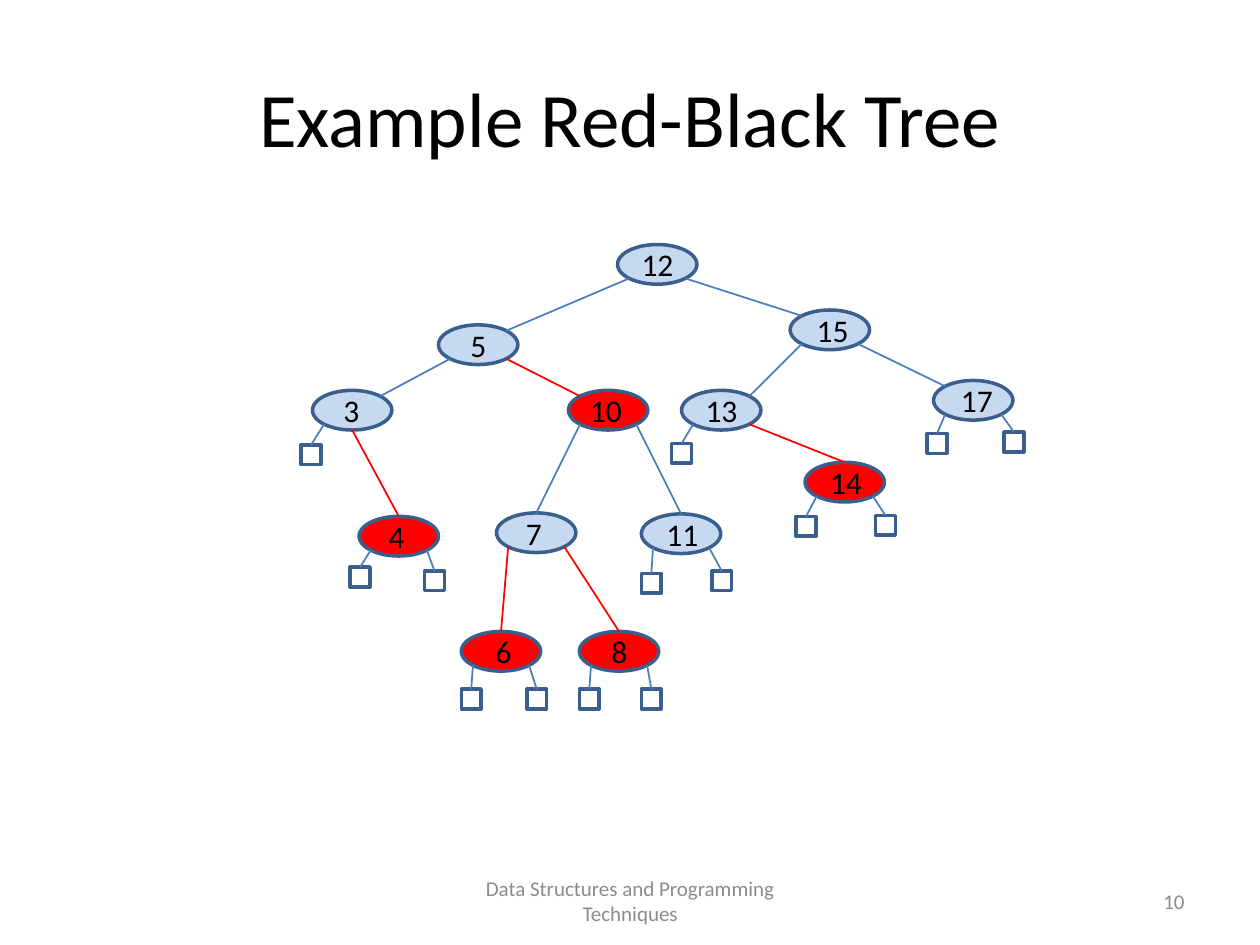
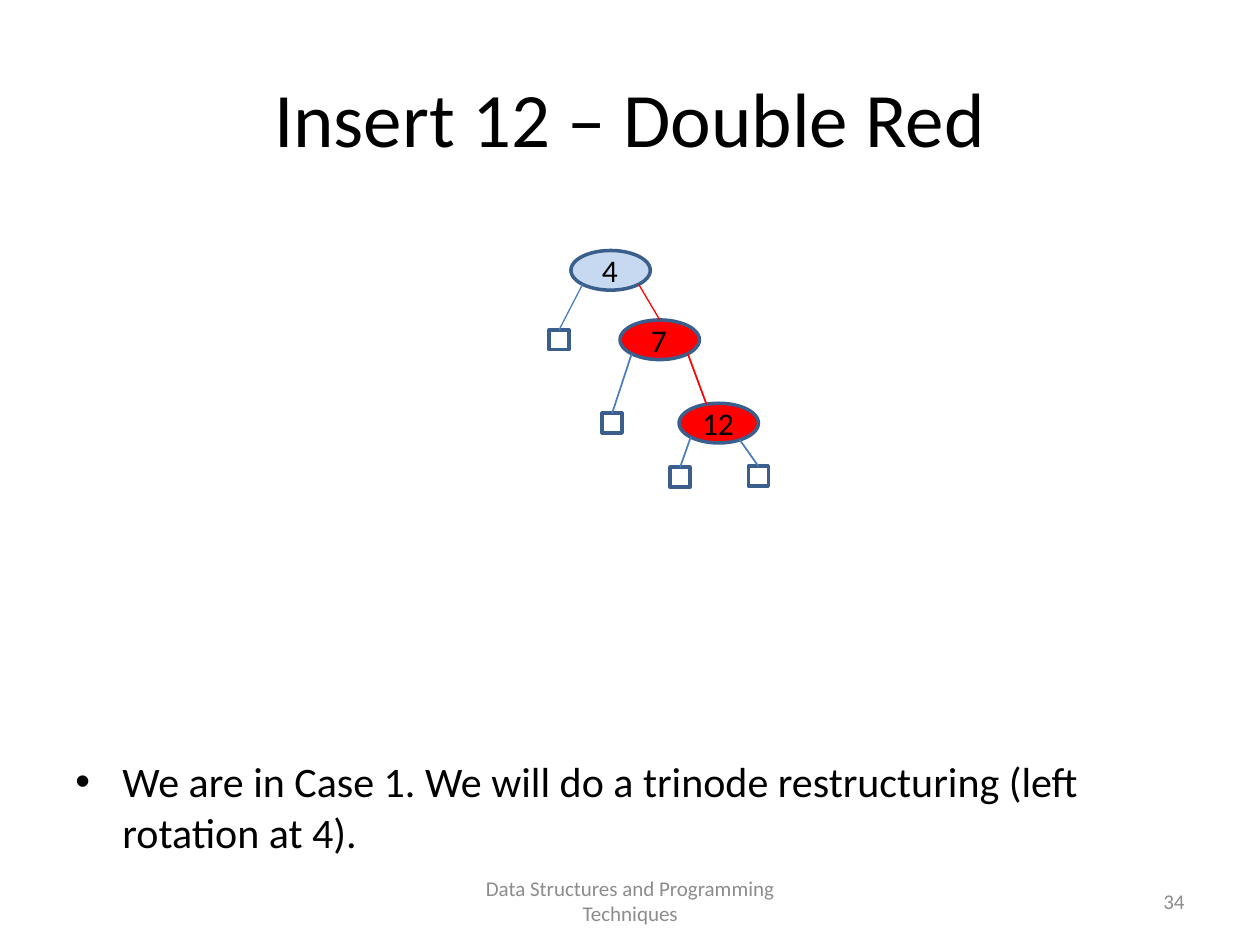
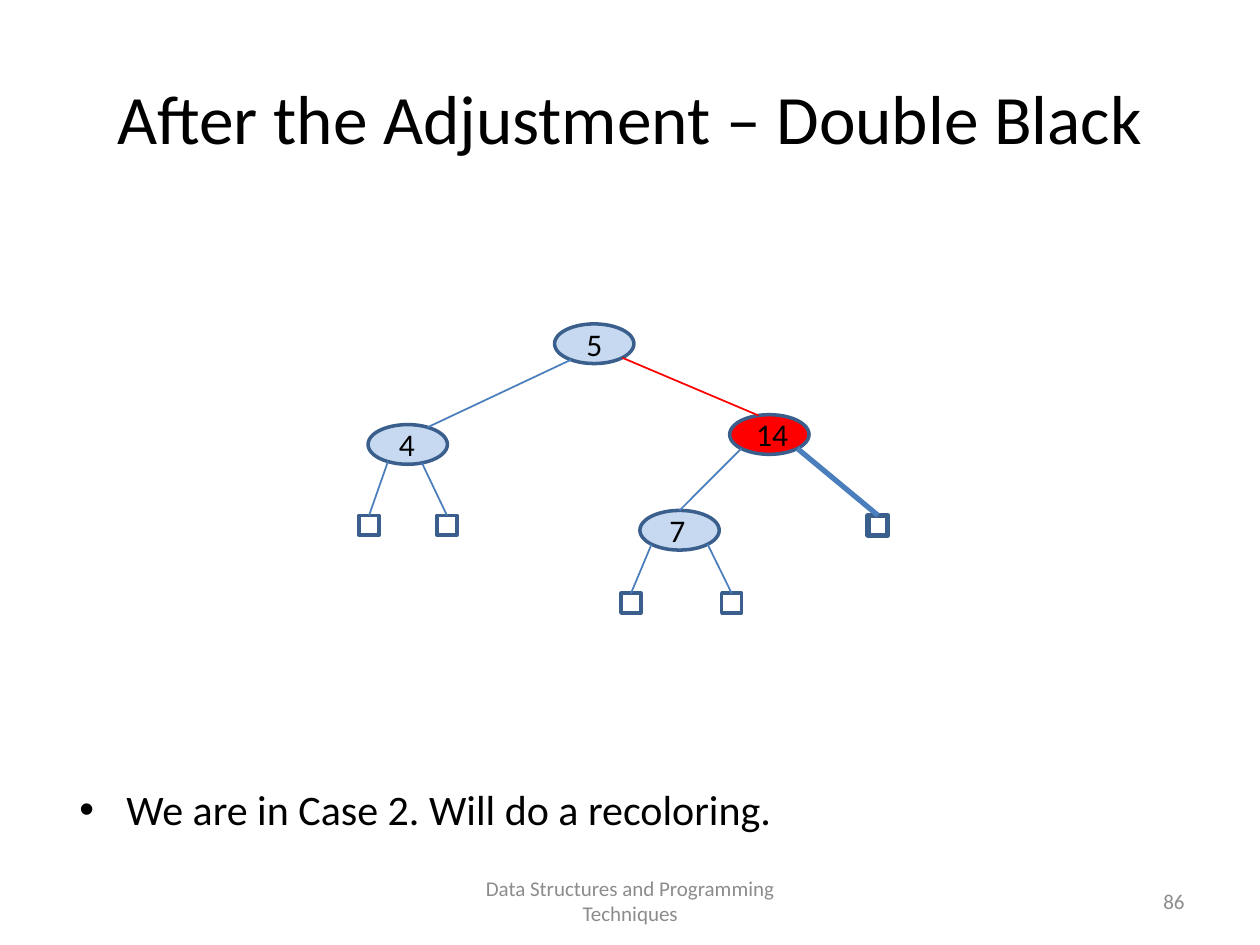
import dataclasses
import math

import lxml.etree
import pptx
import pptx.dml.color
import pptx.enum.shapes
import pptx.enum.text
import pptx.oxml.ns
import pptx.util

Cm = pptx.util.Cm
Pt = pptx.util.Pt
RGBColor = pptx.dml.color.RGBColor
Shape = pptx.enum.shapes.MSO_SHAPE
Align = pptx.enum.text.PP_ALIGN
Anchor = pptx.enum.text.MSO_ANCHOR
qn = pptx.oxml.ns.qn

BLACK = RGBColor(0x00, 0x00, 0x00)
GREY = RGBColor(0x8C, 0x8C, 0x8C)
RED = RGBColor(0xFF, 0x00, 0x00)
PALE_BLUE = RGBColor(0xC6, 0xD9, 0xF1)
OUTLINE_BLUE = RGBColor(0x3A, 0x5F, 0x8C)
EDGE_BLUE = RGBColor(0x4B, 0x7E, 0xBC)

FONT = "Calibri"
FOOTER = "Data Structures and Programming Techniques"
NODE_WIDTH, NODE_HEIGHT = 1.6, 0.8
LEAF_SIZE = 0.4

# Places on a node's rim, in degrees counter-clockwise from its right end
UPPER_RIGHT, TOP, UPPER_LEFT = 45, 90, 135
LOWER_LEFT, BOTTOM, LOWER_RIGHT = 225, 270, 315


@dataclasses.dataclass
class Node:
    """A tree node in cm; label_shift is the label box's offset from its left."""
    left: float
    top: float
    colour: RGBColor = PALE_BLUE
    label_shift: float = 0.16

    def rim(self, angle):
        turn = math.radians(angle)
        return (self.left + NODE_WIDTH / 2 * (1 + math.cos(turn)),
                self.top + NODE_HEIGHT / 2 * (1 - math.sin(turn)))


def write(frame, text, size=18, colour=BLACK, align=Align.CENTER,
          anchor=Anchor.TOP, bullet=False):
    frame.word_wrap = True
    frame.auto_size = pptx.enum.text.MSO_AUTO_SIZE.NONE
    frame.vertical_anchor = anchor
    para = frame.paragraphs[0]
    para.alignment = align
    span = para.add_run()
    span.text = text
    span.font.name = FONT
    span.font.size = Pt(size)
    span.font.color.rgb = colour
    if bullet:
        properties = para._p.get_or_add_pPr()
        properties.set("marL", str(Cm(0.95)))
        properties.set("indent", str(-Cm(0.95)))
        lxml.etree.SubElement(properties, qn("a:buFont"), typeface="Arial")
        lxml.etree.SubElement(properties, qn("a:buChar"), char="•")


class TreeDeck:
    def __init__(self):
        self.deck = pptx.Presentation()
        self.deck.slide_width = Cm(25.4)
        self.deck.slide_height = Cm(19.05)
        self.page = None

    def start_page(self, title, number, title_size=44):
        self.page = self.deck.slides.add_slide(self.deck.slide_layouts[5])
        heading = self.page.shapes.title
        heading.left, heading.top = Cm(1.27), Cm(0.76)
        heading.width, heading.height = Cm(22.86), Cm(3.18)
        write(heading.text_frame, title, size=title_size, anchor=Anchor.MIDDLE)
        small = dict(size=12, colour=GREY, anchor=Anchor.MIDDLE)
        self.text(FOOTER, 8.68, 17.65, 8.05, 1.02, **small)
        self.text(str(number), 18.2, 17.65, 5.93, 1.02, align=Align.RIGHT, **small)

    def text(self, text, left, top, width, height, **style):
        box = self.page.shapes.add_textbox(Cm(left), Cm(top), Cm(width), Cm(height))
        write(box.text_frame, text, **style)

    def bullet(self, text, left, top):
        self.text(text, left, top, 22.86, 2.2, size=24, align=Align.LEFT, bullet=True)

    def shape(self, kind, left, top, width, height, fill=None, weight=2):
        shape = self.page.shapes.add_shape(
            kind, Cm(left), Cm(top), Cm(width), Cm(height))
        shape.shadow.inherit = False
        shape.line.color.rgb = OUTLINE_BLUE
        shape.line.width = Pt(weight)
        if fill is None:
            shape.fill.background()
        else:
            shape.fill.solid()
            shape.fill.fore_color.rgb = fill
        return shape

    def edge(self, start, end, colour=EDGE_BLUE, weight=1, joined=None):
        """Draw a line; joined is a shape whose top middle it ends at."""
        line = self.page.shapes.add_connector(
            pptx.enum.shapes.MSO_CONNECTOR.STRAIGHT,
            Cm(start[0]), Cm(start[1]), Cm(end[0]), Cm(end[1]))
        line.line.color.rgb = colour
        line.line.width = Pt(weight)
        lxml.etree.SubElement(line._element.spPr, qn("a:effectLst"))
        if joined is not None:
            line.end_connect(joined, 0)

    def leaf(self, parent, angle, left, top, edge_weight=1, outline=2):
        box = self.shape(Shape.RECTANGLE, left, top, LEAF_SIZE, LEAF_SIZE,
                         weight=outline)
        self.edge(parent.rim(angle), (left + LEAF_SIZE / 2, top),
                  weight=edge_weight, joined=box)

    def tree(self, nodes, branches, leaves):
        """Draw nodes by value, (parent, angle, child, angle) branches and leaves."""
        ovals = {value: self.shape(Shape.OVAL, node.left, node.top,
                                   NODE_WIDTH, NODE_HEIGHT, fill=node.colour)
                 for value, node in nodes.items()}
        for parent, start, child, end, *weight in branches:
            target = nodes[child]
            self.edge(nodes[parent].rim(start), target.rim(end),
                      RED if target.colour == RED else EDGE_BLUE, *weight,
                      joined=ovals[child] if end == TOP else None)
        for parent, *place in leaves:
            self.leaf(nodes[parent], *place)
        for value, node in nodes.items():
            self.text(str(value), node.left + node.label_shift, node.top - 0.11,
                      1.25, 1.02)


def example_page(deck):
    deck.start_page("Example Red-Black Tree", 10)
    nodes = {
        12: Node(12.45, 4.93, label_shift=0.18),
        5: Node(8.84, 6.55, label_shift=0.18),
        15: Node(15.93, 6.25, label_shift=0.23),
        3: Node(6.3, 7.87),
        10: Node(11.46, 7.87, RED, 0.13),
        13: Node(13.74, 7.87, label_shift=0.18),
        17: Node(18.82, 7.67, label_shift=0.25),
        4: Node(7.24, 10.41, RED, 0.13),
        7: Node(10.01, 10.34, label_shift=0.13),
        11: Node(12.93, 10.36, label_shift=0.2),
        14: Node(16.23, 9.32, RED, 0.2),
        6: Node(9.3, 12.73, RED, 0.23),
        8: Node(11.68, 12.73, RED, 0.18),
    }
    branches = [
        (12, LOWER_LEFT, 5, UPPER_RIGHT), (12, LOWER_RIGHT, 15, UPPER_LEFT),
        (5, LOWER_LEFT, 3, UPPER_RIGHT), (5, LOWER_RIGHT, 10, UPPER_LEFT),
        (15, LOWER_LEFT, 13, UPPER_RIGHT), (15, LOWER_RIGHT, 17, UPPER_LEFT),
        (3, BOTTOM, 4, TOP), (13, LOWER_RIGHT, 14, TOP),
        (10, LOWER_LEFT, 7, TOP), (10, LOWER_RIGHT, 11, TOP),
        (7, LOWER_LEFT, 6, TOP), (7, LOWER_RIGHT, 8, TOP),
    ]
    leaves = [
        (3, LOWER_LEFT, 6.07, 8.97), (13, LOWER_LEFT, 13.54, 8.94),
        (17, LOWER_LEFT, 18.69, 8.74), (17, LOWER_RIGHT, 20.24, 8.71),
        (14, LOWER_LEFT, 16.05, 10.41), (14, LOWER_RIGHT, 17.65, 10.39),
        (4, LOWER_LEFT, 7.06, 11.43), (4, LOWER_RIGHT, 8.56, 11.51),
        (11, LOWER_LEFT, 12.93, 11.56), (11, LOWER_RIGHT, 14.35, 11.51),
        (6, LOWER_LEFT, 9.3, 13.89), (6, LOWER_RIGHT, 10.62, 13.89),
        (8, LOWER_LEFT, 11.68, 13.89), (8, LOWER_RIGHT, 12.93, 13.89),
    ]
    deck.tree(nodes, branches, leaves)


def double_red_page(deck):
    deck.start_page("Insert 12 – Double Red", 34)
    nodes = {
        4: Node(11.51, 5.05),
        7: Node(12.5, 6.45, RED),
        12: Node(13.69, 8.13, RED),
    }
    branches = [(4, LOWER_RIGHT, 7, TOP, 0.75), (7, LOWER_RIGHT, 12, 108)]
    leaves = [
        (4, LOWER_LEFT, 11.07, 6.65, 0.75), (7, LOWER_LEFT, 12.14, 8.33),
        (12, LOWER_LEFT, 13.51, 9.42), (12, 302, 15.09, 9.4),
    ]
    deck.tree(nodes, branches, leaves)
    deck.bullet("We are in Case 1. We will do a trinode restructuring "
                "(left rotation at 4).", 1.27, 15.11)


def double_black_page(deck):
    deck.start_page("After the Adjustment – Double Black", 86, title_size=39.6)
    nodes = {
        5: Node(11.18, 6.53, label_shift=0.18),
        4: Node(7.42, 8.56),
        14: Node(14.71, 8.36, RED, 0.23),
        7: Node(12.9, 10.29, label_shift=0.13),
    }
    branches = [
        (5, 234, 4, 60), (5, LOWER_RIGHT, 14, 106), (14, LOWER_LEFT, 7, TOP),
    ]
    leaves = [
        (4, 240, 7.24, 10.39), (4, 291, 8.81, 10.39),
        (7, LOWER_LEFT, 12.52, 11.96), (7, LOWER_RIGHT, 14.55, 11.96),
        (14, LOWER_RIGHT, 17.5, 10.39, 3, 3),
    ]
    deck.tree(nodes, branches, leaves)
    deck.bullet("We are in Case 2. Will do a recoloring.", 1.35, 15.67)


def main():
    deck = TreeDeck()
    example_page(deck)
    double_red_page(deck)
    double_black_page(deck)
    deck.deck.save("out.pptx")


if __name__ == "__main__":
    main()
